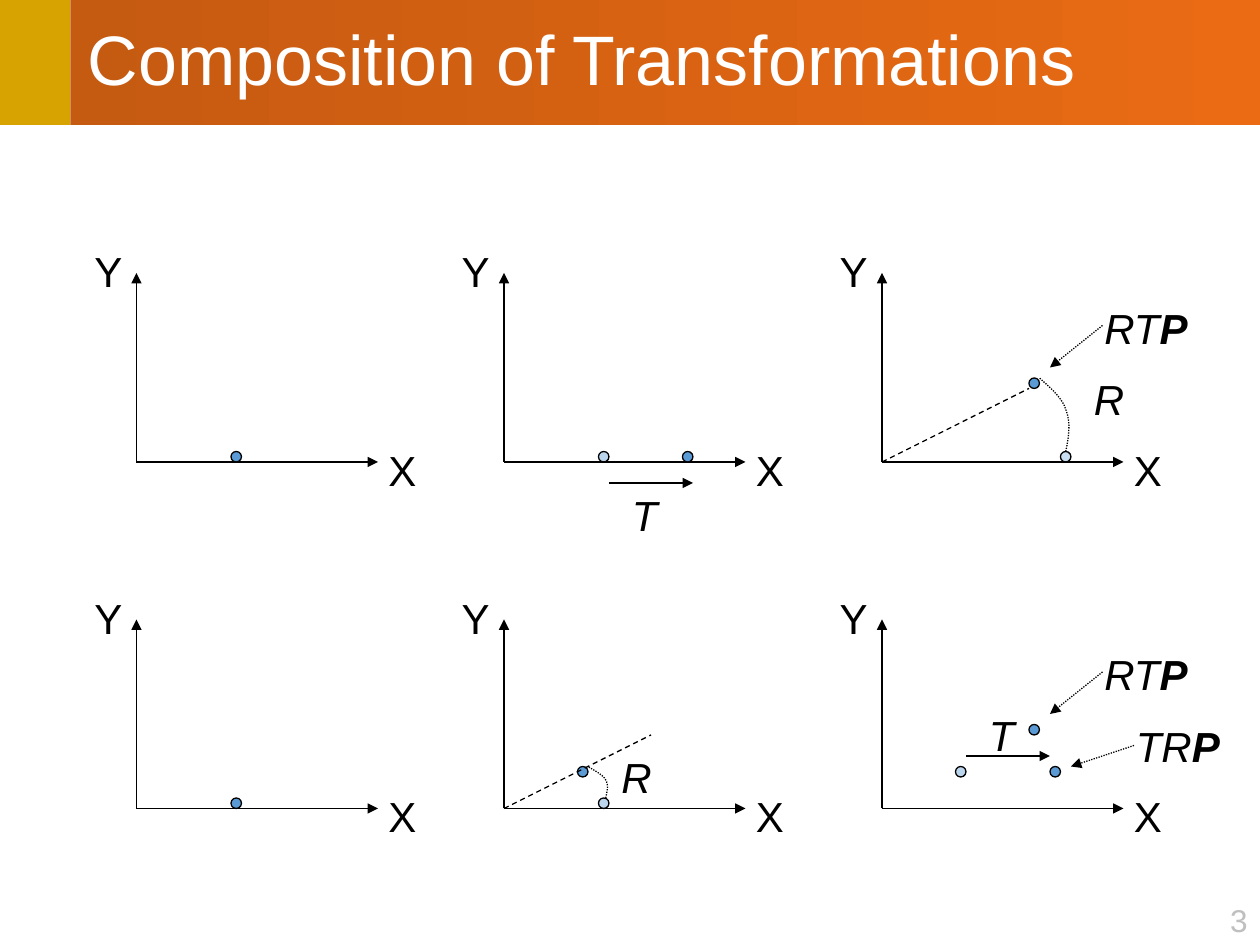
import pptx
import pptx.util
import pptx.dml.color
import pptx.enum.dml
import pptx.enum.shapes
import pptx.enum.text
import pptx.oxml
import pptx.oxml.ns
import lxml.etree

EMU_PER_PX = 7620  # 120 px to the inch
COLORS = {
    "gold": "D6A300",
    "title_start": "C55A11",
    "title_end": "EA6B14",
    "white": "FFFFFF",
    "ink": "000000",
    "point": "5B9BD5",
    "page": "BFBFBF",
}
DASH = pptx.enum.dml.MSO_LINE.DASH
DOTTED = pptx.enum.dml.MSO_LINE.ROUND_DOT
SHAPES = pptx.enum.shapes.MSO_SHAPE
ALIGN = pptx.enum.text.PP_ALIGN


def px(value):
    return pptx.util.Emu(round(value * EMU_PER_PX))


def rgb(name):
    return pptx.dml.color.RGBColor.from_string(COLORS[name])


def bezier(start, first, second, end, steps=10):
    """Return points along a cubic curve, without its start."""
    points = []
    for step in range(1, steps + 1):
        t = step / steps
        weights = ((1 - t) ** 3, 3 * t * (1 - t) ** 2, 3 * t ** 2 * (1 - t), t ** 3)
        controls = (start, first, second, end)
        points.append(tuple(sum(w * c[axis] for w, c in zip(weights, controls))
                            for axis in (0, 1)))
    return points


class Diagram:
    font = "Arial"
    label_size = 24
    line_width = 0.75
    dot_size = 10

    def __init__(self, slide):
        self.slide = slide

    def style_line(self, line, dash=None):
        line.color.rgb = rgb("ink")
        line.width = pptx.util.Pt(self.line_width)
        if dash is not None:
            line.dash_style = dash

    def style_paragraph(self, paragraph, size, color, italic=False):
        font = paragraph.font
        font.name = self.font
        font.size = pptx.util.Pt(size)
        font.italic = italic
        font.color.rgb = rgb(color)

    def block(self, left, top, width, height, kind=SHAPES.RECTANGLE):
        shape = self.slide.shapes.add_shape(kind, px(left), px(top), px(width), px(height))
        shape.shadow.inherit = False
        shape.line.fill.background()
        return shape

    def header(self, title):
        accent = self.block(0, 0, 67, 119)
        accent.fill.solid()
        accent.fill.fore_color.rgb = rgb("gold")
        banner = self.block(67, 0, 1133, 119)
        banner.fill.gradient()
        banner.fill.gradient_angle = 0
        for stop, color in zip(banner.fill.gradient_stops, ("title_start", "title_end")):
            stop.color.rgb = rgb(color)
        banner.text_frame.vertical_anchor = pptx.enum.text.MSO_ANCHOR.MIDDLE
        paragraph = banner.text_frame.paragraphs[0]
        paragraph.text = title
        paragraph.alignment = ALIGN.LEFT
        paragraph.line_spacing = 0.9
        paragraph._p.get_or_add_pPr().set("marL", str(px(5)))
        self.style_paragraph(paragraph, 40, "white")

    def text(self, left, top, width, text, bold_tail="", italic=False,
             height=60, size=label_size, color="ink", align=ALIGN.LEFT):
        box = self.slide.shapes.add_textbox(px(left), px(top), px(width), px(height))
        frame = box.text_frame
        frame.word_wrap = bool(bold_tail)
        frame.auto_size = pptx.enum.text.MSO_AUTO_SIZE.SHAPE_TO_FIT_TEXT
        paragraph = frame.paragraphs[0]
        paragraph.alignment = align
        self.style_paragraph(paragraph, size, color, italic)
        paragraph.add_run().text = text
        if bold_tail:
            run = paragraph.add_run()
            run.text = bold_tail
            run.font.bold = True

    def line(self, start, end, dash=None, arrow=True):
        connector = self.slide.shapes.add_connector(
            pptx.enum.shapes.MSO_CONNECTOR.STRAIGHT, *map(px, (*start, *end)))
        self.style_line(connector.line, dash)
        properties = connector._element.spPr
        if arrow:
            tail = lxml.etree.SubElement(connector.line._get_or_add_ln(),
                                         pptx.oxml.ns.qn("a:tailEnd"))
            tail.set("type", "triangle")
        lxml.etree.SubElement(properties, pptx.oxml.ns.qn("a:effectLst"))

    def dot(self, left, top, opacity=100):
        shape = self.block(left, top, self.dot_size, self.dot_size, SHAPES.OVAL)
        shape.fill.solid()
        shape.fill.fore_color.rgb = rgb("point")
        self.style_line(shape.line)
        if opacity < 100:
            color = shape._element.spPr.find(".//" + pptx.oxml.ns.qn("a:srgbClr"))
            alpha = lxml.etree.SubElement(color, pptx.oxml.ns.qn("a:alpha"))
            alpha.set("val", str(opacity * 1000))

    def arc(self, start, *curves):
        """Draw a dotted arc; each curve is two control points and an end."""
        points = [start]
        for curve in curves:
            points += bezier(points[-1], *curve)
        vertices = [(px(x), px(y)) for x, y in points]
        builder = self.slide.shapes.build_freeform(*vertices[0], scale=1.0)
        builder.add_line_segments(vertices[1:], close=False)
        shape = builder.convert_to_shape()
        shape.shadow.inherit = False
        shape.fill.background()
        self.style_line(shape.line, DOTTED)

    def axes(self, x, y):
        self.line((x, y), (x, y - 180))
        self.line((x, y), (x + 230, y))
        self.text(x + 228, y - 23, 53, "X")
        self.text(x - 52, y - 212, 53, "Y")

    def composed_label(self, left, top, transforms, start, end):
        """Label a transformed point P and point a dotted arrow at it."""
        self.text(left, top, 110, transforms, bold_tail="P", italic=True)
        self.line(start, end, DOTTED)


def main():
    presentation = pptx.Presentation()
    presentation.slide_width, presentation.slide_height = px(1200), px(900)
    diagram = Diagram(presentation.slides.add_slide(presentation.slide_layouts[6]))
    diagram.header("Composition of Transformations")
    diagram.text(1139, 852, 61, "3", height=48, size=18, color="page", align=ALIGN.RIGHT)

    row_tops = (440, 770)
    for y in row_tops:
        for x in (130, 480, 840):
            diagram.axes(x, y)
        diagram.dot(220, y - 10)
        diagram.dot(570, y - 10, opacity=41)
        diagram.composed_label(1040, y - 158, "RT", (1050, y - 130), (1000, y - 90))
        diagram.dot(980, y - 80)

    # Top row: translate, then rotate
    diagram.dot(650, 430)
    diagram.line((580, 460), (660, 460))
    diagram.text(590, 460, 48, "T", italic=True)
    diagram.dot(1010, 430, opacity=32)
    diagram.arc((1015, 430), ((1018, 416), (1020, 402), (1015, 390)),
                ((1012, 378), (995, 365), (990, 360)))
    diagram.text(1030, 350, 54, "R", italic=True)
    diagram.line((840, 440), (980, 370), DASH, arrow=False)

    # Bottom row: rotate, then translate
    diagram.dot(550, 730)
    diagram.arc((577, 760), ((578, 754), (580, 748), (577, 743)),
                ((575, 738), (563, 732), (560, 730)))
    diagram.text(580, 710, 54, "R", italic=True)
    diagram.line((480, 770), (620, 700), DASH, arrow=False)
    diagram.dot(910, 730, opacity=41)
    diagram.dot(1000, 730)
    diagram.line((920, 720), (1000, 720))
    diagram.text(930, 670, 48, "T", italic=True)
    diagram.composed_label(1070, 680, "TR", (1080, 710), (1020, 730))

    presentation.save("out.pptx")


if __name__ == "__main__":
    main()
